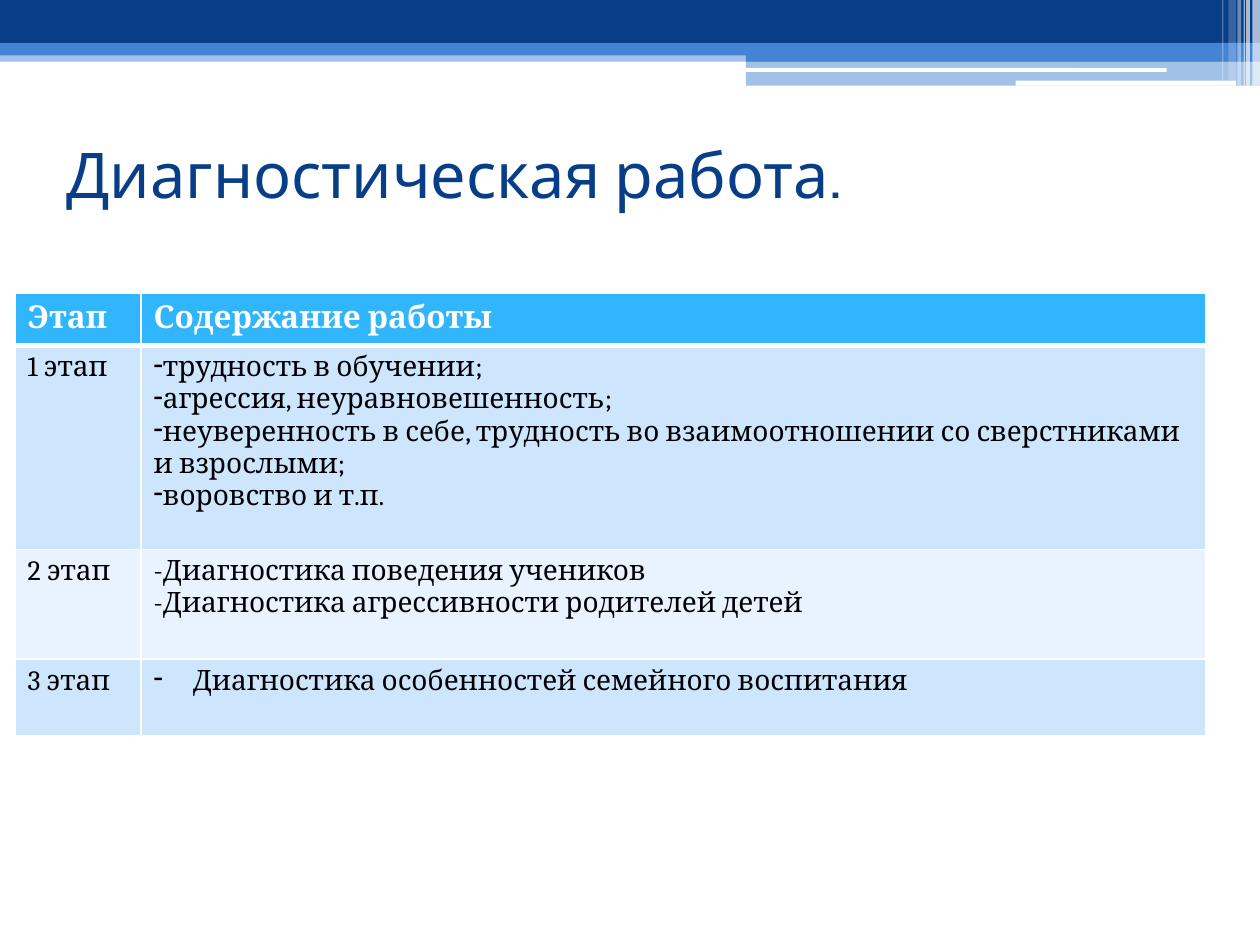
from lxml.etree import SubElement
from pptx import Presentation
from pptx.dml.color import RGBColor
from pptx.enum.shapes import MSO_SHAPE as Shape
from pptx.enum.text import MSO_ANCHOR as Anchor
from pptx.oxml import parse_xml
from pptx.oxml.ns import nsdecls, qn
from pptx.util import Inches, Pt

NAVY, BLUE, WHITE, BLACK = "073E87", "4584D3", "FFFFFF", "000000"
HEADER, BAND_DARK, BAND_LIGHT = "31B6FD", "CEE5FE", "E8F3FF"


def color(value):
    return RGBColor.from_string(value)


class SlideBuilder:
    title_format = {"name": "Cabin", "size": Pt(36), "bold": False}
    header_format = {"name": "Cambria", "size": Pt(18), "bold": True}
    body_format = {"name": "Cambria", "size": Pt(16), "bold": False}

    def __init__(self, page):
        self.page = page

    def add_text(self, para, text, style, fill):
        span = para.add_run()
        span.text = text
        for key, value in style.items():
            setattr(span.font, key, value)
        span.font.color.rgb = color(fill)

    def bar(self, left, top, width, height, fill, opacity=100, kind=Shape.RECTANGLE):
        shape = self.page.shapes.add_shape(
            kind, Inches(left), Inches(top), Inches(width), Inches(height))
        shape.shadow.inherit = False
        shape.line.fill.background()
        shape.fill.solid()
        shape.fill.fore_color.rgb = color(fill)
        if opacity < 100:
            tint = shape.fill._xPr.find(".//" + qn("a:srgbClr"))
            SubElement(tint, qn("a:alpha"), val=str(opacity * 1000))

    def title(self, text, left, top, width, height):
        box = self.page.shapes.add_textbox(
            Inches(left), Inches(top), Inches(width), Inches(height))
        frame = box.text_frame
        frame.word_wrap = True
        frame.vertical_anchor = Anchor.MIDDLE
        self.add_text(frame.paragraphs[0], text, self.title_format, NAVY)

    def bullet(self, para, indent):
        props = para._p.get_or_add_pPr()
        props.set("marL", str(Inches(indent)))
        props.set("indent", str(-Inches(indent)))
        SubElement(props, qn("a:buChar"), char="-")

    def borders(self, cell, top, bottom):
        props = cell._tc.get_or_add_tcPr()
        widths = {"lnL": 1, "lnR": 1, "lnT": top, "lnB": bottom}
        for index, (side, width) in enumerate(widths.items()):
            props.insert(index, parse_xml(
                f'<a:{side} {nsdecls("a")} w="{Pt(width)}"><a:solidFill>'
                f'<a:srgbClr val="{WHITE}"/></a:solidFill></a:{side}>'))

    def cell(self, cell, lines, row, indent=None):
        style, ink = (self.body_format, BLACK) if row else (self.header_format, WHITE)
        cell.fill.solid()
        cell.fill.fore_color.rgb = color(
            HEADER if row == 0 else BAND_DARK if row % 2 else BAND_LIGHT)
        self.borders(cell, 3 if row == 1 else 1, 3 if row == 0 else 1)
        frame = cell.text_frame
        for index, line in enumerate(lines):
            para = frame.add_paragraph() if index else frame.paragraphs[0]
            if indent is not None:
                self.bullet(para, indent)
            self.add_text(para, line, style, ink)

    def table(self, left, top, widths, heights, rows):
        table = self.page.shapes.add_table(
            len(rows), len(widths), Inches(left), Inches(top),
            Inches(sum(widths)), Inches(sum(heights))).table
        for column, width in zip(table.columns, widths):
            column.width = Inches(width)
        for index, (height, (stage, lines, indent)) in enumerate(zip(heights, rows)):
            table.rows[index].height = Inches(height)
            self.cell(table.cell(index, 0), [stage], index)
            self.cell(table.cell(index, 1), lines, index, indent)


def main():
    deck = Presentation()
    deck.slide_width, deck.slide_height = Inches(10), Inches(7.5)
    builder = SlideBuilder(deck.slides.add_slide(deck.slide_layouts[6]))

    builder.bar(0, 0.4, 10, 0.09, BLUE, 50)
    builder.bar(0, 0, 10, 0.34, NAVY)
    builder.bar(0, 0.34, 10, 0.1, BLUE)
    builder.bar(5.92, 0.39, 4.08, 0.1, BLUE)
    builder.bar(5.92, 0.48, 4.08, 0.2, BLUE, 50)
    for left, top, width, height in [(5.91, 0.54, 3.35, 0.03), (8.06, 0.64, 1.75, 0.04)]:
        builder.bar(left, top, width, height, WHITE, kind=Shape.ROUNDED_RECTANGLE)
    stripes = [(9.94, 0.06, 0.68, 65), (9.89, 0.03, 0.68, 65), (9.87, 0.01, 0.68, 60),
               (9.82, 0.03, 0.68, 40), (9.75, 0.06, 0.64, 20), (9.7, 0.01, 0.64, 30)]
    for left, width, height, opacity in stripes:
        builder.bar(left, 0, width, height, WHITE, opacity)

    builder.title("Диагностическая работа.", 0.43, 1.07, 9, 0.61)
    builder.table(0.12, 2.33, [1, 8.45], [0.41, 1.62, 0.87, 0.61], [
        ("Этап", ["Содержание работы"], None),
        ("1 этап", [
            "трудность в обучении;",
            "агрессия, неуравновешенность;",
            "неуверенность в себе, трудность во взаимоотношении со сверстниками и взрослыми;",
            "воровство и т.п."], 0),
        ("2 этап", [
            "-Диагностика поведения учеников",
            "-Диагностика агрессивности родителей детей"], None),
        ("3 этап", ["Диагностика особенностей семейного воспитания"], 0.31),
    ])
    deck.save("out.pptx")


if __name__ == "__main__":
    main()
